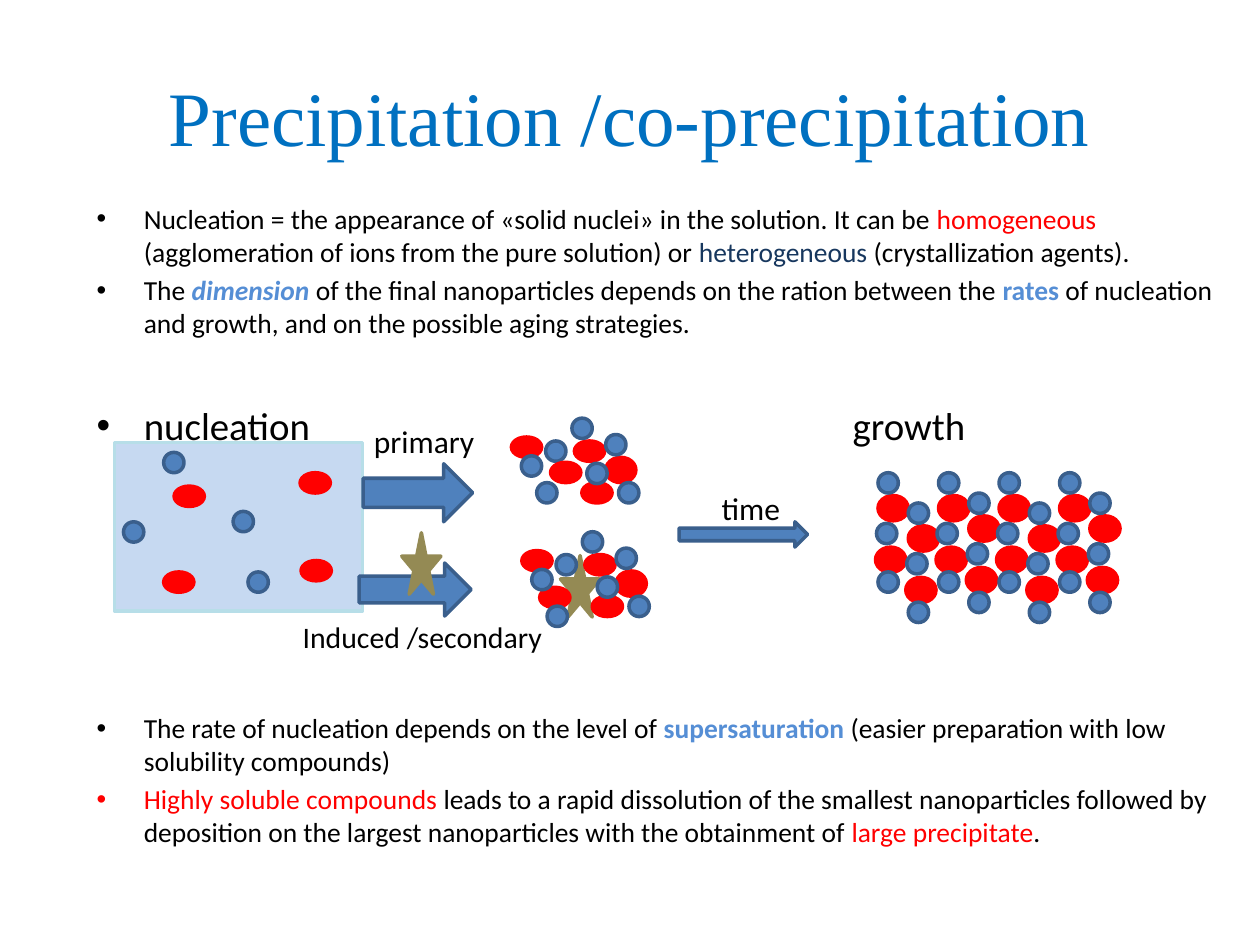
from lxml import etree
from pptx import Presentation
from pptx.dml.color import RGBColor
from pptx.enum.shapes import MSO_SHAPE
from pptx.enum.text import MSO_ANCHOR, PP_ALIGN
from pptx.oxml.ns import qn
from pptx.util import Cm, Pt

BLACK, RED, NAVY, SKY = "000000", "FF0000", "17375E", "558ED5"
BLUE, BLUE_EDGE, KHAKI, TITLE_BLUE = "4F81BD", "3A5F8C", "948A54", "0070C0"

TITLE = "Precipitation /co-precipitation"
# (space before in pt, size in pt, [(text, colour, style)])
BULLETS = [
    (0, 15.7, [
        ("Nucleation = the appearance of «solid nuclei» in the solution. It can be ", BLACK, ""),
        ("homogeneous", RED, ""),
        (" (agglomeration of ions from the pure solution) or ", BLACK, ""),
        ("heterogeneous", NAVY, ""),
        (" (crystallization agents).", BLACK, "")]),
    (3.1, 15.7, [
        ("The ", BLACK, ""),
        ("dimension ", SKY, "bi"),
        ("of the final nanoparticles depends on the ration between the ", BLACK, ""),
        ("rates ", SKY, "b"),
        ("of nucleation and growth, and on the possible aging strategies.", BLACK, "")]),
    (36, 22.2, [("nucleation\tgrowth", BLACK, "")]),
    (150, 15.7, [
        ("The rate of nucleation depends on the level of ", BLACK, ""),
        ("supersaturation", SKY, "b"),
        (" (easier preparation with low solubility compounds)", BLACK, "")]),
    (3.1, 15.7, [
        ("Highly soluble compounds ", RED, ""),
        ("leads to a rapid dissolution of the smallest nanoparticles followed by "
         "deposition on the largest nanoparticles with the obtainment of ", BLACK, ""),
        ("large precipitate", RED, ""),
        (".", BLACK, "")]),
]
# (text, size in pt, left, top, width, height); all places are in cm
LABELS = [
    ("time", 18, 14.3, 9.73, 1.7, 1.02),
    ("primary", 18, 7.29, 8.38, 2.69, 1.02),
    ("Induced /secondary", 17, 5.85, 12.34, 5.4, 0.99),
]

# kind: (width, height, fill, line)
IONS = {
    "blue": (0.41, 0.41, BLUE, BLUE_EDGE),
    "red": (0.61, 0.41, RED, RED),
    "large red": (0.61, 0.51, RED, RED),
}
DISSOLVED_IONS = [
    ("blue", 3.3, 9.12), ("blue", 2.49, 10.52), ("blue", 4.7, 10.31), ("blue", 5, 11.53),
    ("red", 6.05, 9.53), ("red", 3.3, 11.53), ("red", 3.51, 9.8), ("red", 6.07, 11.3),
]
ARROWS = [(7.32, 9.35, 2.21, 1.17), (7.24, 11.35, 2.26, 1.07)]
TIME_ARROW = (13.69, 10.52, 2.59, 0.51)
SEEDS = [(8.1, 10.74, 0.79, 1.24), (11.3, 11.2, 0.79, 1.24)]

PRIMARY_NUCLEUS = [
    ("blue", 0.69, 0.46), ("red", 1.27, 0.46), ("red", 1.42, 1.3), ("red", 0.79, 0.89),
    ("red", 0, 0.38), ("large red", 1.9, 0.79), ("blue", 0.2, 0.76), ("blue", 0.51, 1.3),
    ("blue", 1.52, 0.91), ("blue", 1.9, 0.33), ("blue", 2.16, 1.3), ("blue", 1.22, 0),
]
# Ions that the seed pushes aside in the induced nucleus
PUSHED = {3: ("red", 0.36, 1.12), 7: ("blue", 0.51, 1.5)}
INDUCED_NUCLEUS = [PUSHED.get(i, ion) for i, ion in enumerate(PRIMARY_NUCLEUS)]
PRIMARY_ORIGIN, INDUCED_ORIGIN = (10.31, 8.43), (10.52, 10.72)

CRYSTAL_COLUMN = [
    ("large red", -0.05, 1.5), ("blue", -0.03, 1.02), ("blue", 0, 2),
    ("large red", 0, 0.46), ("blue", 0, 0),
]
CRYSTAL_ORIGIN, COLUMN_PITCH = (17.7, 9.53), 0.61
COLUMN_DROPS = [0, 0.61, 0, 0.41] * 2

presentation = Presentation()
presentation.slide_width, presentation.slide_height = Cm(25.4), Cm(19.05)
slide = presentation.slides.add_slide(presentation.slide_layouts[6])


def rgb(colour):
    return RGBColor.from_string(colour)


def draw(preset, box, fill, line):
    shape = slide.shapes.add_shape(preset, *map(Cm, box))
    shape.shadow.inherit = False
    shape.fill.solid()
    shape.fill.fore_color.rgb = rgb(fill)
    shape.line.color.rgb = rgb(line)
    shape.line.width = Pt(2)


def draw_ions(ions, origin=(0, 0)):
    for kind, x, y in ions:
        width, height, fill, line = IONS[kind]
        draw(MSO_SHAPE.OVAL, (origin[0] + x, origin[1] + y, width, height), fill, line)


def add_text_frame(box, wrap=True):
    frame = slide.shapes.add_textbox(*map(Cm, box)).text_frame
    frame.word_wrap = wrap
    return frame


def style(run, size, colour, font="Calibri", marks=""):
    run.font.name, run.font.size = font, Pt(size)
    run.font.color.rgb = rgb(colour)
    run.font.bold, run.font.italic = "b" in marks, "i" in marks


def add_bullet(paragraph, tab):
    """Give a hanging bullet and one tab stop."""
    properties = paragraph._p.get_or_add_pPr()
    properties.set("marL", str(Cm(0.95)))
    properties.set("indent", str(Cm(-0.95)))
    etree.SubElement(properties, qn("a:buFont"), typeface="Arial")
    etree.SubElement(properties, qn("a:buChar"), char="•")
    stops = etree.SubElement(properties, qn("a:tabLst"))
    etree.SubElement(stops, qn("a:tab"), pos=str(Cm(tab)), algn="l")


draw(MSO_SHAPE.RECTANGLE, (2.31, 8.92, 5, 3.4), "C6D9F1", "B7DEE8")

body = add_text_frame((1.7, 3.94, 23.39, 13.54))
for number, (space, size, runs) in enumerate(BULLETS):
    paragraph = body.add_paragraph() if number else body.paragraphs[0]
    paragraph.space_before = Pt(space)
    add_bullet(paragraph, tab=15.24)
    for text, colour, marks in runs:
        run = paragraph.add_run()
        run.text = text
        style(run, size, colour, marks=marks)

title = add_text_frame((1.9, 0.74, 21.6, 3.18))
title.text = TITLE
title.vertical_anchor = MSO_ANCHOR.MIDDLE
title.paragraphs[0].alignment = PP_ALIGN.CENTER
style(title.paragraphs[0].runs[0], 44, TITLE_BLUE, "Times New Roman")

draw_ions(DISSOLVED_IONS)
for arrow in ARROWS:
    draw(MSO_SHAPE.RIGHT_ARROW, arrow, BLUE, BLUE_EDGE)
for seed in SEEDS:
    draw(MSO_SHAPE.STAR_5_POINT, seed, KHAKI, KHAKI)
draw_ions(INDUCED_NUCLEUS, INDUCED_ORIGIN)
draw_ions(PRIMARY_NUCLEUS, PRIMARY_ORIGIN)
draw(MSO_SHAPE.RIGHT_ARROW, TIME_ARROW, BLUE, BLUE_EDGE)
for column, drop in enumerate(COLUMN_DROPS):
    draw_ions(CRYSTAL_COLUMN,
              (CRYSTAL_ORIGIN[0] + column * COLUMN_PITCH, CRYSTAL_ORIGIN[1] + drop))

for text, size, *box in LABELS:
    label = add_text_frame(box, wrap=False)
    label.text = text
    style(label.paragraphs[0].runs[0], size, BLACK)

presentation.save("out.pptx")
